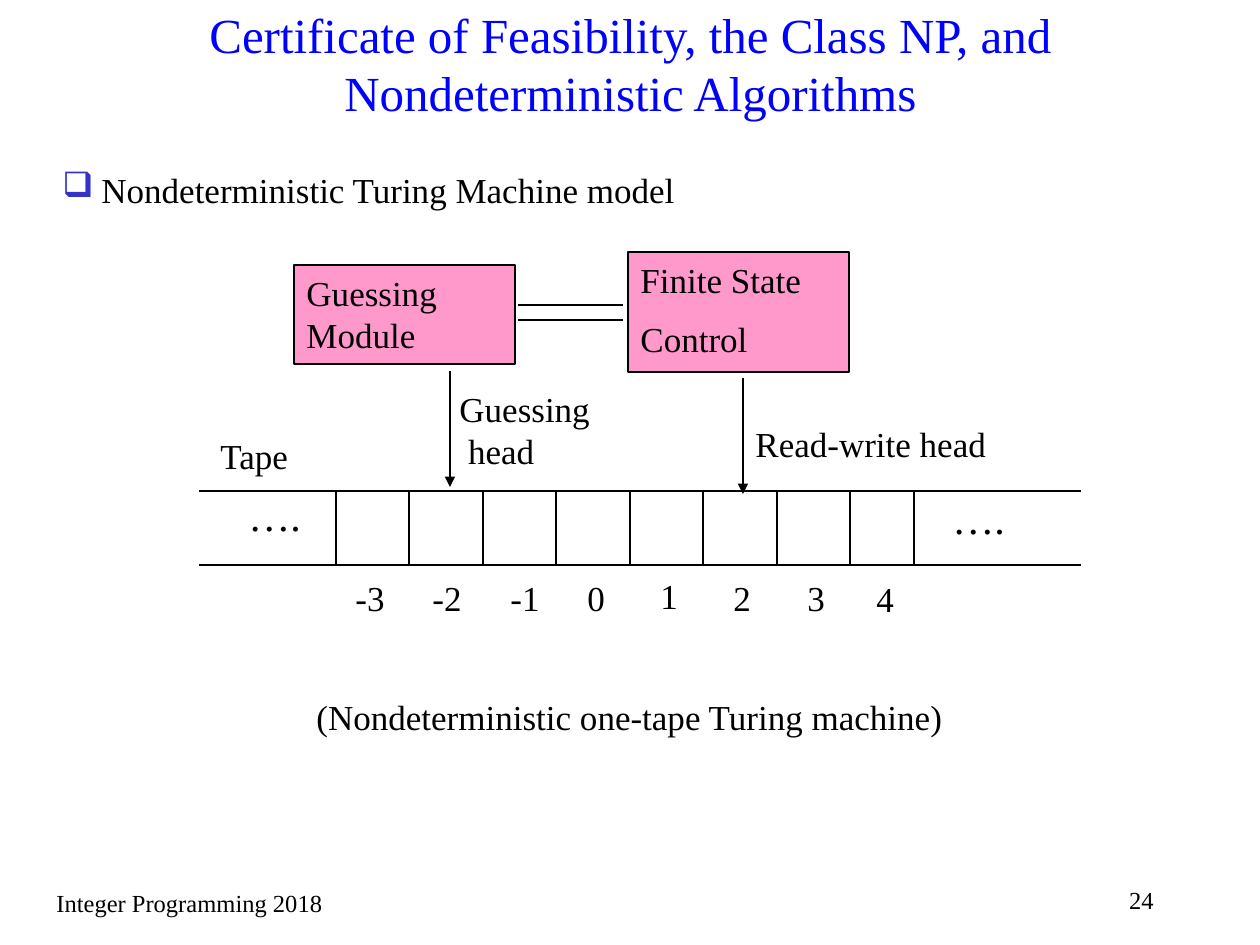
from lxml.etree import SubElement
from pptx import Presentation
from pptx.dml.color import RGBColor as Rgb
from pptx.enum.shapes import MSO_CONNECTOR as Connector, MSO_SHAPE as Shape
from pptx.enum.text import MSO_ANCHOR as Anchor, PP_ALIGN as Align
from pptx.oxml.ns import qn
from pptx.util import Emu, Pt

PX_PER_INCH = 126
COLORS = {"text": "000000", "title": "0000FF", "bullet": "3333CC", "box": "FF99CC"}


def px(length):
    return Emu(round(length * 914400 / PX_PER_INCH))


def color(name):
    return Rgb.from_string(COLORS[name])


class SlideBuilder:
    font = "Times New Roman"

    def __init__(self, slide):
        self.slide = slide

    def set_lines(self, frame, lines, size=20, ink="text", wrap=True, anchor=Anchor.TOP, **paragraph_format):
        frame.word_wrap = wrap
        frame.vertical_anchor = anchor
        for index, line in enumerate(lines):
            paragraph = frame.add_paragraph() if index else frame.paragraphs[0]
            for name, value in {"alignment": Align.LEFT, **paragraph_format}.items():
                setattr(paragraph, name, value)
            run = paragraph.add_run()
            run.text = line
            for name, value in {"name": self.font, "size": Pt(size)}.items():
                setattr(run.font, name, value)
            run.font.color.rgb = color(ink)

    def text(self, left, top, width, height, *lines, **style):
        area = self.slide.shapes.add_textbox(*map(px, (left, top, width, height)))
        self.set_lines(area.text_frame, lines, **style)
        return area.text_frame

    def label(self, left, top, width, height, *lines, **style):
        """Add text that stays on its own lines."""
        return self.text(left, top, width, height, *lines, wrap=False, **style)

    def bullet(self, left, top, width, height, line, mark, indent):
        frame = self.text(left, top, width, height, line, alignment=Align.JUSTIFY,
                          line_spacing=1.05, space_before=Pt(4))
        properties = frame.paragraphs[0]._p.get_or_add_pPr()
        properties.set("marL", str(px(indent)))
        properties.set("indent", str(-px(indent)))
        bullet_color = SubElement(properties, qn("a:buClr"))
        SubElement(bullet_color, qn("a:srgbClr"), val=COLORS["bullet"])
        SubElement(properties, qn("a:buChar"), char=mark)

    def box(self, left, top, width, height, *lines):
        module = self.slide.shapes.add_shape(Shape.RECTANGLE, *map(px, (left, top, width, height)))
        module.shadow.inherit = False
        module.fill.solid()
        module.fill.fore_color.rgb = color("box")
        module.line.color.rgb = color("text")
        module.line.width = Pt(1.5)
        self.set_lines(module.text_frame, lines, space_before=Pt(10))

    def line(self, x1, y1, x2, y2, arrow=False):
        stroke = self.slide.shapes.add_connector(Connector.STRAIGHT, *map(px, (x1, y1, x2, y2)))
        stroke.line.color.rgb = color("text")
        stroke.line.width = Pt(0.75)
        properties = stroke._element.spPr
        if arrow:
            SubElement(properties.get_or_add_ln(), qn("a:tailEnd"), type="triangle")
        SubElement(properties, qn("a:effectLst"))


def main():
    deck = Presentation()
    deck.slide_width, deck.slide_height = px(1260), px(945)
    page = SlideBuilder(deck.slides.add_slide(deck.slide_layouts[6]))

    page.text(44, 882, 348, 42, "Integer Programming 2018", size=14)
    page.text(1017, 879, 149, 44, "24", size=14, alignment=Align.RIGHT)
    page.text(95, 26, 1071, 74,
              "Certificate of Feasibility, the Class NP, and Nondeterministic Algorithms",
              size=28, ink="title", anchor=Anchor.MIDDLE, alignment=Align.CENTER)
    page.bullet(50, 160, 1158, 57, "Nondeterministic Turing Machine model", "❑", indent=39)

    page.box(294, 265, 221, 99, "Guessing Module")
    page.box(628, 252, 221, 120, "Finite State", "Control")
    for link_y in (305, 320):
        page.line(518, link_y, 623, link_y)

    tape_top, tape_bottom = 491, 565
    for edge_y in (tape_top, tape_bottom):
        page.line(199, edge_y, 1081, edge_y)
    cell_edges = [336 + 147 * cell // 2 for cell in range(8)] + [914]
    for edge_x in cell_edges:
        page.line(edge_x, tape_top, edge_x, tape_bottom)
    for index, left, top in (("-3", 343, 570), ("-2", 420, 570), ("-1", 498, 570), ("0", 575, 570),
                             ("1", 648, 568), ("2", 721, 570), ("3", 795, 570), ("4", 864, 571)):
        page.label(left, top, 57 if "-" in index else 43, 55, index)
    for left, top in ((236, 483), (940, 486)):
        page.label(left, top, 79, 63, "….", size=24)

    page.line(450, 371, 450, 487, arrow=True)
    page.line(743, 378, 743, 494, arrow=True)
    page.label(447, 381, 156, 97, "Guessing", " head")
    page.label(743, 416, 258, 55, "Read-write head")
    page.label(208, 428, 93, 55, "Tape")
    page.label(302, 689, 655, 55, "(Nondeterministic one-tape Turing machine)", alignment=Align.CENTER)

    deck.save("out.pptx")


if __name__ == "__main__":
    main()
